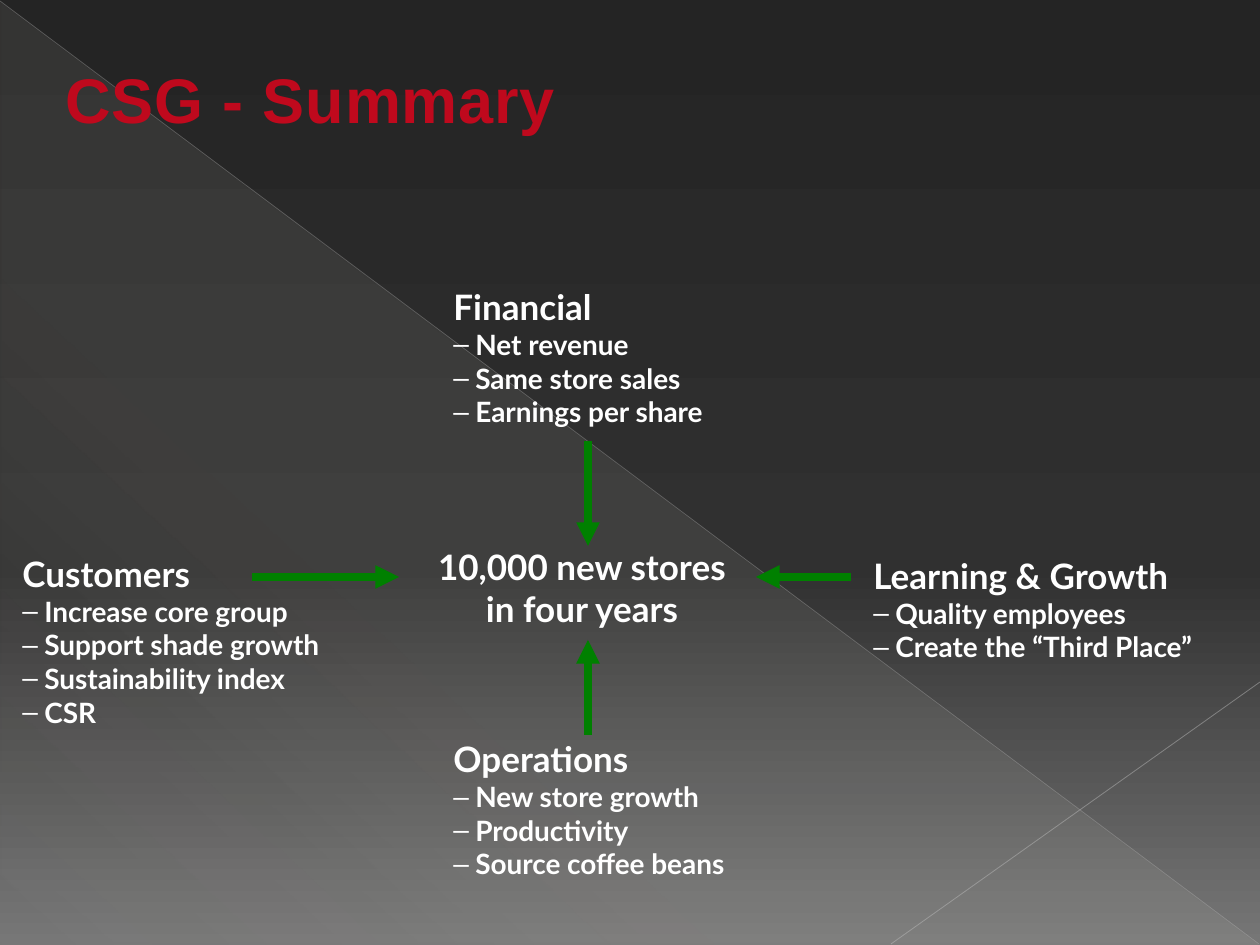
from dataclasses import dataclass

from pptx import Presentation
from pptx.dml.color import RGBColor
from pptx.enum.shapes import MSO_CONNECTOR as Connector, MSO_SHAPE as Shape
from pptx.enum.text import MSO_ANCHOR as Anchor, MSO_AUTO_SIZE as AutoSize, PP_ALIGN as Align
from pptx.oxml.ns import qn
from pptx.oxml.xmlchemy import OxmlElement
from pptx.util import Pt

EMU_PER_PX = 914400 / 126
COLORS = {
    "title": "BF091D",
    "text": "FFFFFF",
    "arrow": "008000",
    "sheen": "E3DED1",
    "diagonal": "B6B6B6",
    "corner": "BFBFBF",
    "sky_top": "242424",
    "sky_middle": "303030",
    "sky_bottom": "767676",
}
BULLET_INDENT = 22


@dataclass(frozen=True)
class Stop:
    position: int
    color: str
    opacity: int = 100


@dataclass(frozen=True)
class Line:
    start: tuple[int, int]
    end: tuple[int, int]
    color: str
    width: float
    opacity: int = 100
    arrow: bool = False


@dataclass(frozen=True)
class Perspective:
    box: tuple[int, int, int, int]
    heading: str
    measures: tuple[str, ...]


BACKDROP_LINES = (
    Line((0, 1), (1259, 944), "diagonal", 0.39, 35),
    Line((1260, 682), (891, 944), "corner", 0.47, 45),
)
GOAL_BOX = (388, 525, 388, 126)
GOAL_LINES = ("10,000 new stores", "in four years")
PERSPECTIVES = (
    Perspective((861, 546, 410, 126), "Learning & Growth",
                ("Quality employees", "Create the “Third Place”")),
    Perspective((441, 294, 431, 126), "Financial",
                ("Net revenue", "Same store sales", "Earnings per share")),
    Perspective((10, 546, 388, 189), "Customers",
                ("Increase core group", "Support shade growth", "Sustainability index", "CSR")),
    Perspective((441, 725, 388, 168), "Operations",
                ("New store growth", "Productivity", "Source coffee beans")),
)
ARROWS = tuple(
    Line(start, end, "arrow", 4.5, arrow=True)
    for start, end in (
        ((252, 577), (399, 577)),
        ((588, 441), (588, 546)),
        ((851, 577), (756, 577)),
        ((588, 735), (588, 640)),
    )
)


def px(*lengths: int) -> list[int]:
    return [round(length * EMU_PER_PX) for length in lengths]


def rgb(name: str) -> RGBColor:
    return RGBColor.from_string(COLORS[name])


def add_child(parent, tag: str, **attributes):
    child = OxmlElement(tag)
    for key, value in attributes.items():
        child.set(key, str(value))
    parent.append(child)
    return child


def set_opacity(color, percent: int) -> None:
    if percent < 100:
        add_child(color, "a:alpha", val=percent * 1000)


def set_gradient(owner, stops: tuple[Stop, ...], angle: int) -> None:
    """Replace the solid fill of an element by a linear gradient."""
    gradient = OxmlElement("a:gradFill")
    stop_list = add_child(gradient, "a:gsLst")
    for stop in stops:
        entry = add_child(stop_list, "a:gs", pos=stop.position * 1000)
        set_opacity(add_child(entry, "a:srgbClr", val=COLORS[stop.color]), stop.opacity)
    add_child(gradient, "a:lin", ang=angle * 60000, scaled=0)
    solid = owner.find(qn("a:solidFill"))
    owner.replace(solid, gradient)


def add_line(slide, line: Line) -> None:
    connector = slide.shapes.add_connector(Connector.STRAIGHT, *px(*line.start, *line.end))
    connector.line.color.rgb = rgb(line.color)
    connector.line.width = Pt(line.width)
    outline = connector.element.spPr.find(qn("a:ln"))
    set_opacity(outline.find(qn("a:solidFill"))[0], line.opacity)
    if line.arrow:
        add_child(outline, "a:tailEnd", type="triangle")
    add_child(connector.element.spPr, "a:effectLst")


def add_text(slide, box: tuple[int, int, int, int], lines: tuple[str, ...]):
    frame = slide.shapes.add_textbox(*px(*box)).text_frame
    frame.word_wrap = True
    frame.vertical_anchor = Anchor.MIDDLE
    frame.text = "\n".join(lines)
    for paragraph in frame.paragraphs:
        font = paragraph.runs[0].font
        font.name, font.size, font.bold = "Lato", Pt(20), True
        font.color.rgb = rgb("text")
    return frame.paragraphs


def add_perspective(slide, perspective: Perspective) -> None:
    lines = (perspective.heading, *perspective.measures)
    _, *measures = add_text(slide, perspective.box, lines)
    indent = px(BULLET_INDENT)[0]
    for measure in measures:
        measure.runs[0].font.size = Pt(16)
        properties = measure._p.get_or_add_pPr()
        properties.set("marL", str(indent))
        properties.set("indent", str(-indent))
        add_child(properties, "a:buFont", typeface="Arial")
        add_child(properties, "a:buChar", char="–")


def add_backdrop(slide) -> None:
    slide.background.fill.solid()
    slide.background.fill.fore_color.rgb = rgb("sky_top")
    background = next(slide.element.iter(qn("p:bgPr")))
    set_gradient(background, (Stop(0, "sky_top"), Stop(60, "sky_middle"),
                              Stop(100, "sky_bottom")), 90)

    sheen = slide.shapes.add_shape(Shape.RIGHT_TRIANGLE, *px(1, 2, 1258, 942))
    sheen.shadow.inherit = False
    sheen.line.fill.background()
    sheen.fill.solid()
    set_gradient(sheen.element.spPr, (Stop(0, "sheen", 10), Stop(70, "sheen", 8),
                                      Stop(100, "sheen", 1)), 133)
    for line in BACKDROP_LINES:
        add_line(slide, line)


def format_title(slide) -> None:
    title = slide.shapes.title
    title.left, title.top, title.width, title.height = px(53, 63, 903, 71)
    frame = title.text_frame
    frame.text = "CSG - Summary"
    frame.auto_size = AutoSize.NONE
    frame.vertical_anchor = Anchor.MIDDLE
    heading = frame.paragraphs[0]
    heading.alignment = Align.LEFT
    font = heading.runs[0].font
    font.name, font.size, font.bold = "Arial", Pt(36), True
    font.color.rgb = rgb("title")
    heading.runs[0]._r.get_or_add_rPr().set("spc", "50")
    # Bring the title in front of the backdrop
    title.element.getparent().append(title.element)


def main() -> None:
    deck = Presentation()
    deck.slide_width, deck.slide_height = px(1260, 945)
    slide = deck.slides.add_slide(deck.slide_layouts[5])

    add_backdrop(slide)

    # Central goal and the four perspectives around it
    for paragraph in add_text(slide, GOAL_BOX, GOAL_LINES):
        paragraph.alignment = Align.CENTER
    for perspective in PERSPECTIVES:
        add_perspective(slide, perspective)

    format_title(slide)

    # Arrows towards the goal
    for arrow in ARROWS:
        add_line(slide, arrow)

    deck.save("out.pptx")


if __name__ == "__main__":
    main()
